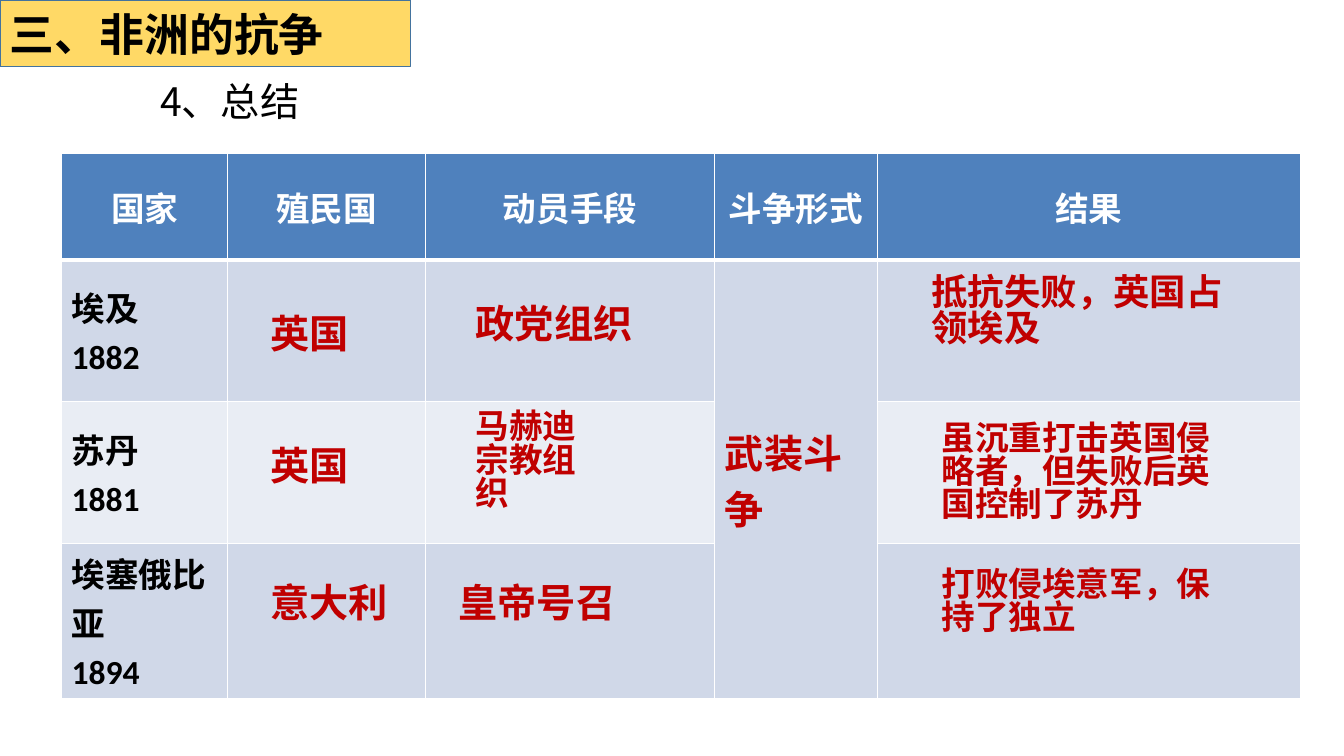
from dataclasses import dataclass

from lxml.etree import SubElement
from pptx import Presentation
from pptx.dml.color import RGBColor
from pptx.enum.shapes import MSO_SHAPE
from pptx.enum.text import MSO_ANCHOR, MSO_AUTO_SIZE, PP_ALIGN
from pptx.oxml.ns import qn
from pptx.util import Inches, Pt


@dataclass(frozen=True)
class Theme:
    latin: str = "Calibri"
    chinese: str = "Noto Sans CJK SC"
    black: str = "000000"
    white: str = "FFFFFF"
    answer: str = "C00000"
    header: str = "4F81BD"
    dark_band: str = "D0D8E8"
    light_band: str = "E9EDF4"
    banner: str = "FFD966"
    banner_line: str = "43739E"
    title_size: int = 32
    large: int = 28
    medium: int = 26
    body: int = 24
    tight_spacing: float = 0.83


THEME = Theme()

COLUMN_WIDTHS = (1.65, 1.96, 2.87, 1.61, 4.2)
ROW_HEIGHTS = (1.06, 1.4, 1.41, 1.49)
HEADINGS = ("国家", "殖民国", "动员手段", "斗争形式", "结果")
COUNTRIES = ("埃及\n1882", "苏丹\n1881", "埃塞俄比亚\n1894")
STRUGGLE_COLUMN = HEADINGS.index("斗争形式")

# text, left, top, width, height, size
ANSWERS = (
    ("英国", 2.58, 3.1, 0.99, 0.57, THEME.large),
    ("英国", 2.58, 4.41, 0.99, 0.57, THEME.large),
    ("意大利", 2.58, 5.77, 1.39, 0.57, THEME.large),
    ("政党组织", 4.62, 3, 1.78, 0.57, THEME.large),
    ("皇帝号召", 4.45, 5.77, 1.78, 0.57, THEME.large),
    ("抵抗失败，英国占领埃及", 9.14, 2.69, 3.44, 0.97, THEME.medium),
    ("虽沉重打击英国侵略者，但失败后英国控制了苏丹", 9.24, 4.15, 3.03, 1.31, THEME.body),
    ("打败侵埃意军，保持了独立", 9.24, 5.6, 3.08, 0.91, THEME.body),
    ("马赫迪宗教组织", 4.62, 4.04, 1.42, 1.31, THEME.body),
)


def rgb(color):
    return RGBColor.from_string(color)


def write(frame, text, size, color, latin=THEME.chinese, bold=True,
          align=PP_ALIGN.LEFT, spacing=None):
    frame.text = text
    for index, paragraph in enumerate(frame.paragraphs):
        paragraph.alignment = align
        if spacing:
            paragraph.line_spacing = spacing
        if index:
            paragraph.space_before = Pt(0.2 * size)
        for run in paragraph.runs:
            run.font.size = Pt(size)
            run.font.bold = bold
            run.font.color.rgb = rgb(color)
            run.font.name = latin
            east_asian = SubElement(run.font._element, qn("a:ea"))
            east_asian.set("typeface", THEME.chinese)


def style_cell(cell, fill, top_border, bottom_border):
    properties = cell._tc.get_or_add_tcPr()
    borders = {"lnL": 1, "lnR": 1, "lnT": top_border, "lnB": bottom_border}
    for side, width in borders.items():
        line = SubElement(properties, qn(f"a:{side}"), w=str(Pt(width)))
        solid = SubElement(line, qn("a:solidFill"))
        SubElement(solid, qn("a:srgbClr"), val=THEME.white)
    cell.fill.solid()
    cell.fill.fore_color.rgb = rgb(fill)
    cell.vertical_anchor = MSO_ANCHOR.MIDDLE


def add_summary_table(slide):
    table = slide.shapes.add_table(
        len(ROW_HEIGHTS), len(COLUMN_WIDTHS), Inches(0.61), Inches(1.52),
        Inches(sum(COLUMN_WIDTHS)), Inches(sum(ROW_HEIGHTS))).table
    for column, width in zip(table.columns, COLUMN_WIDTHS):
        column.width = Inches(width)
    for row, height in zip(table.rows, ROW_HEIGHTS):
        row.height = Inches(height)

    bands = (THEME.header, THEME.dark_band, THEME.light_band, THEME.dark_band)
    for index, (row, band) in enumerate(zip(table.rows, bands)):
        for cell in row.cells:
            style_cell(cell, band, 3 if index == 1 else 1, 3 if index == 0 else 1)

    for column, heading in enumerate(HEADINGS):
        write(table.cell(0, column).text_frame, heading, THEME.body, THEME.white,
              latin=THEME.latin, align=PP_ALIGN.CENTER)
    for row, country in enumerate(COUNTRIES, start=1):
        write(table.cell(row, 0).text_frame, country, THEME.body, THEME.black,
              latin=THEME.latin)
    struggle = table.cell(1, STRUGGLE_COLUMN)
    struggle.merge(table.cell(len(COUNTRIES), STRUGGLE_COLUMN))
    write(struggle.text_frame, "武装斗争", THEME.large, THEME.answer)


def add_label(slide, text, left, top, width, height, size,
              color=THEME.answer, bold=True):
    frame = slide.shapes.add_textbox(
        Inches(left), Inches(top), Inches(width), Inches(height)).text_frame
    frame.word_wrap = True
    frame.auto_size = MSO_AUTO_SIZE.SHAPE_TO_FIT_TEXT
    write(frame, text, size, color, bold=bold, spacing=THEME.tight_spacing)


def add_banner(slide, text):
    banner = slide.shapes.add_shape(
        MSO_SHAPE.RECTANGLE, 0, 0, Inches(4.07), Inches(0.66))
    banner.shadow.inherit = False
    banner.fill.solid()
    banner.fill.fore_color.rgb = rgb(THEME.banner)
    banner.line.color.rgb = rgb(THEME.banner_line)
    banner.line.width = Pt(1)
    banner.text_frame.vertical_anchor = MSO_ANCHOR.MIDDLE
    write(banner.text_frame, text, THEME.title_size, THEME.black)


def main():
    presentation = Presentation()
    presentation.slide_width = Inches(13.33)
    presentation.slide_height = Inches(7.5)
    slide = presentation.slides.add_slide(presentation.slide_layouts[6])
    add_summary_table(slide)
    for answer in ANSWERS:
        add_label(slide, *answer)
    add_banner(slide, "三、非洲的抗争")
    add_label(slide, "4、总结", 1.49, 0.8, 3.94, 0.57, THEME.large,
              color=THEME.black, bold=False)
    presentation.save("out.pptx")


if __name__ == "__main__":
    main()
